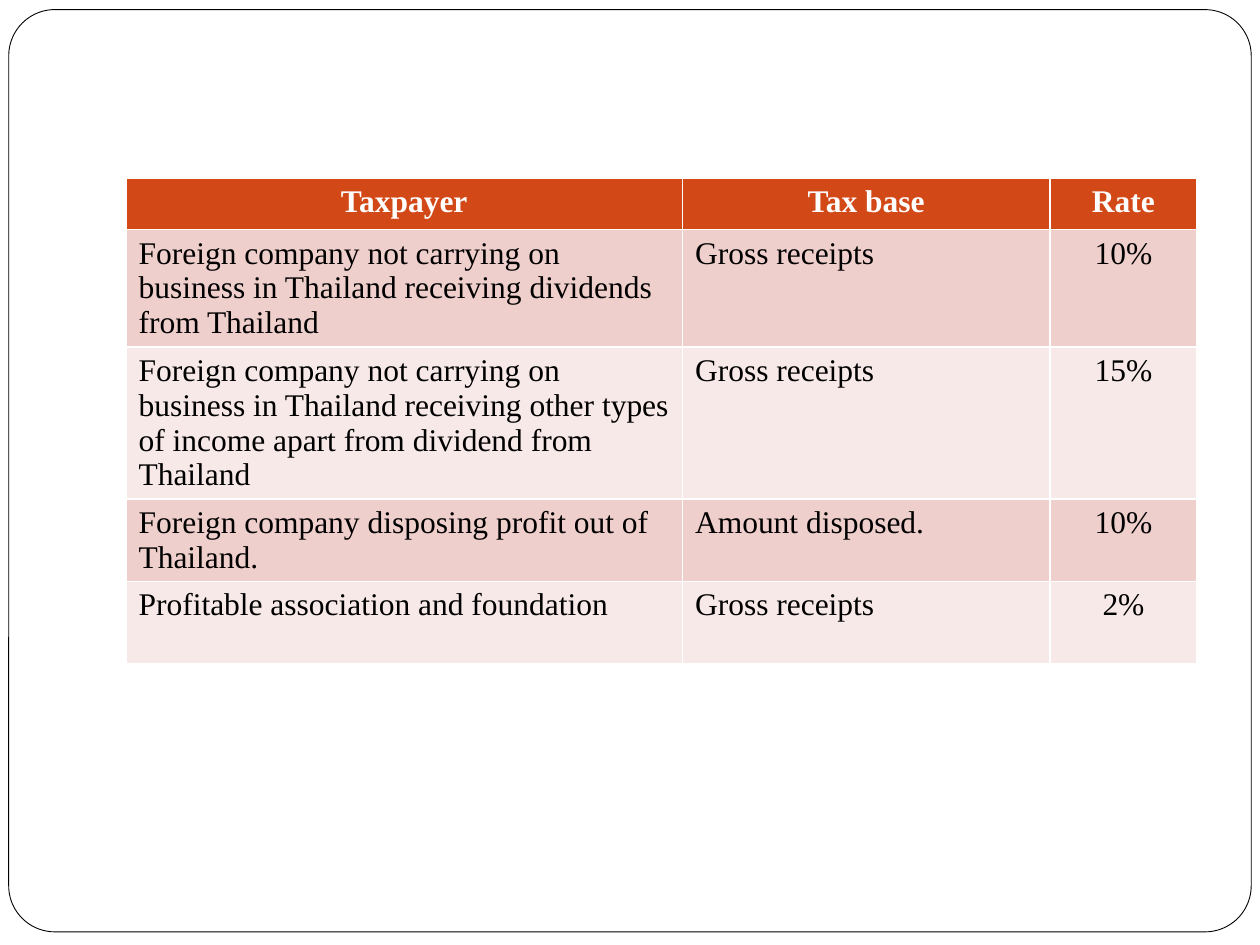
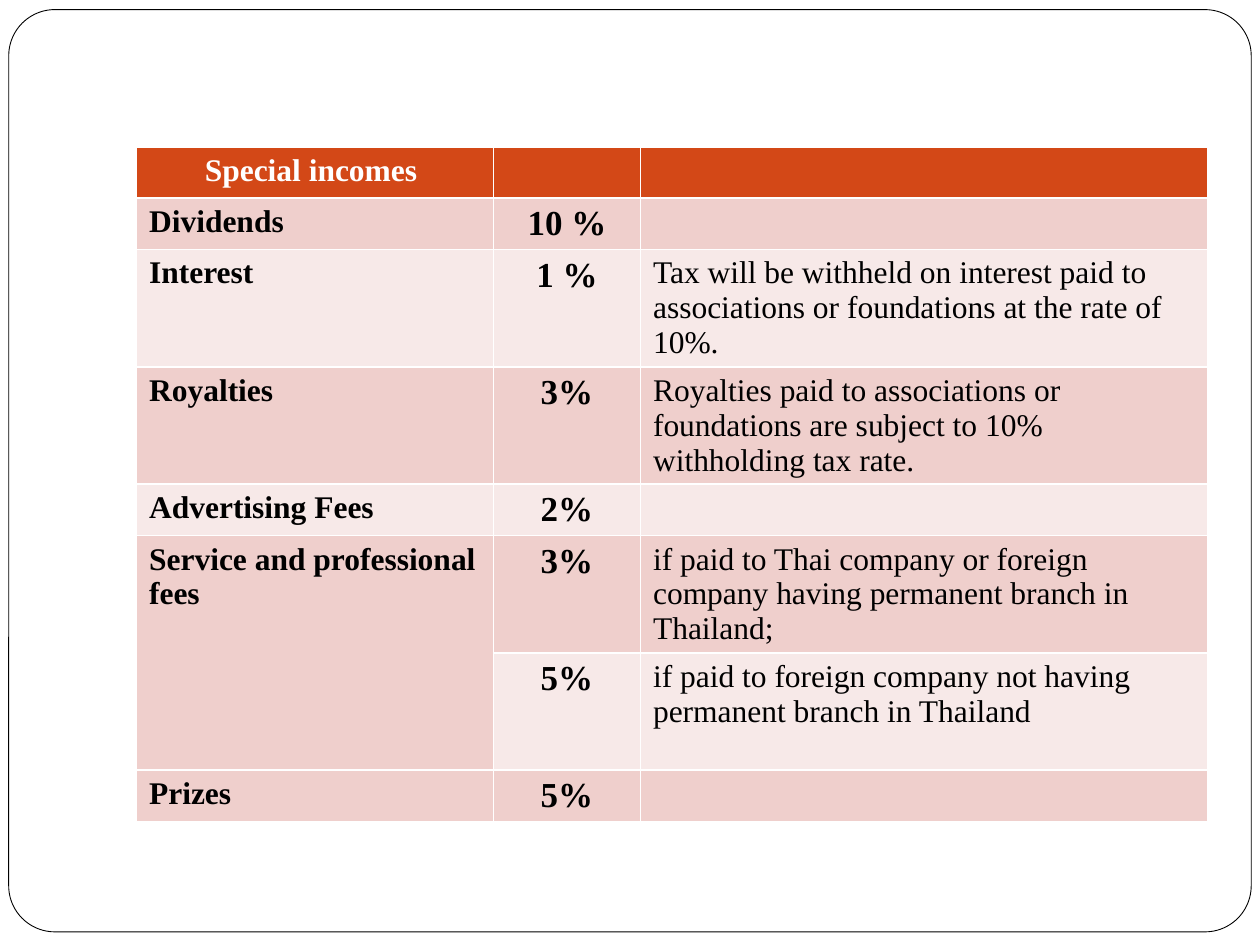
"""Build two slides of Thai withholding tax rates."""
from collections import namedtuple

from pptx import Presentation
from pptx.dml.color import RGBColor
from pptx.enum.shapes import MSO_SHAPE
from pptx.enum.text import PP_ALIGN
from pptx.util import Pt

ROUNDED = MSO_SHAPE.ROUNDED_RECTANGLE
LEFT, CENTER = PP_ALIGN.LEFT, PP_ALIGN.CENTER

FONT = "Times New Roman"
COLORS = {
    "page": "FFFFFF",
    "ink": "000000",
    "header": "D34817",
    "band_dark": "EFCFCC",
    "band_light": "F7E9E8",
}
BANDS = ("band_dark", "band_light")
SINGLE_ROW, DOUBLE_ROW, TRIPLE_ROW, QUAD_ROW = 29.2, 47, 67, 87

Column = namedtuple("Column", "width align size bold")

TAXPAYER_COLUMNS = [
    Column(318, LEFT, 18, False),
    Column(210, LEFT, 18, False),
    Column(84, CENTER, 18, False),
]
TAXPAYER_ROWS = [
    (SINGLE_ROW, "Taxpayer", "Tax base", "Rate"),
    (TRIPLE_ROW, "Foreign company not carrying on business in Thailand "
     "receiving dividends from Thailand", "Gross receipts", "10%"),
    (QUAD_ROW, "Foreign company not carrying on business in Thailand "
     "receiving other types of income apart from dividend from Thailand",
     "Gross receipts", "15%"),
    (DOUBLE_ROW, "Foreign company disposing profit out of Thailand.",
     "Amount disposed.", "10%"),
    (DOUBLE_ROW, "Profitable association and foundation",
     "Gross receipts", "2%"),
]

INCOME_COLUMNS = [
    Column(204, LEFT, 18, True),
    Column(84, CENTER, 20, True),
    Column(324, LEFT, 18, False),
]
INCOME_ROWS = [
    (SINGLE_ROW, "Special incomes ", "", ""),
    (SINGLE_ROW, "Dividends", "10 %", ""),
    (TRIPLE_ROW, "Interest", "1 %", "Tax will be withheld on interest paid "
     "to associations or foundations at the rate of 10%."),
    (TRIPLE_ROW, "Royalties", "3%", "Royalties paid to associations or "
     "foundations are subject to 10% withholding tax rate."),
    (SINGLE_ROW, "Advertising Fees", "2%", ""),
    (TRIPLE_ROW, "Service and professional fees", "3%", "if paid to Thai "
     "company or foreign company having permanent branch in Thailand;"),
    (TRIPLE_ROW, "", "5%", "if paid to foreign company not having "
     "permanent branch in Thailand"),
    (SINGLE_ROW, "Prizes", "5%", ""),
]
SERVICE_FEES, FOREIGN_FEES = 5, 6


class Deck:
    def __init__(self):
        self.presentation = Presentation()
        self.presentation.slide_width = Pt(720)
        self.presentation.slide_height = Pt(540)
        self.slide = None

    def color(self, name):
        return RGBColor.from_string(COLORS[name])

    def add_slide(self):
        blank = self.presentation.slide_layouts[6]
        self.slide = self.presentation.slides.add_slide(blank)
        self.add_frame()

    def add_frame(self):
        frame = self.slide.shapes.add_shape(
            ROUNDED, Pt(5), Pt(5.5), Pt(710), Pt(527))
        frame.adjustments[0] = 0.05
        frame.shadow.inherit = False
        frame.fill.solid()
        frame.fill.fore_color.rgb = self.color("page")
        frame.line.color.rgb = self.color("ink")
        frame.line.width = Pt(0.5)

    def fill_cell(self, cell, text, column, fill, is_header):
        cell.fill.solid()
        cell.fill.fore_color.rgb = self.color(fill)
        cell.text = text
        paragraph = cell.text_frame.paragraphs[0]
        paragraph.alignment = CENTER if is_header else column.align
        font = paragraph.font
        font.name = FONT
        font.size = Pt(18 if is_header else column.size)
        font.bold = is_header or column.bold
        font.color.rgb = self.color("page" if is_header else "ink")

    def add_rate_table(self, left, top, columns, rows):
        width = sum(column.width for column in columns)
        height = sum(row[0] for row in rows)
        table = self.slide.shapes.add_table(
            len(rows), len(columns),
            Pt(left), Pt(top), Pt(width), Pt(height)).table
        for index, column in enumerate(columns):
            table.columns[index].width = Pt(column.width)
        for r, (row_height, *texts) in enumerate(rows):
            table.rows[r].height = Pt(row_height)
            fill = BANDS[(r - 1) % 2] if r else "header"
            for c, text in enumerate(texts):
                self.fill_cell(table.cell(r, c), text, columns[c], fill, r == 0)
        return table


def main():
    deck = Deck()

    deck.add_slide()
    deck.add_rate_table(72, 102, TAXPAYER_COLUMNS, TAXPAYER_ROWS)

    deck.add_slide()
    incomes = deck.add_rate_table(78, 84, INCOME_COLUMNS, INCOME_ROWS)
    incomes.cell(SERVICE_FEES, 0).merge(incomes.cell(FOREIGN_FEES, 0))

    deck.presentation.save("out.pptx")


if __name__ == "__main__":
    main()
